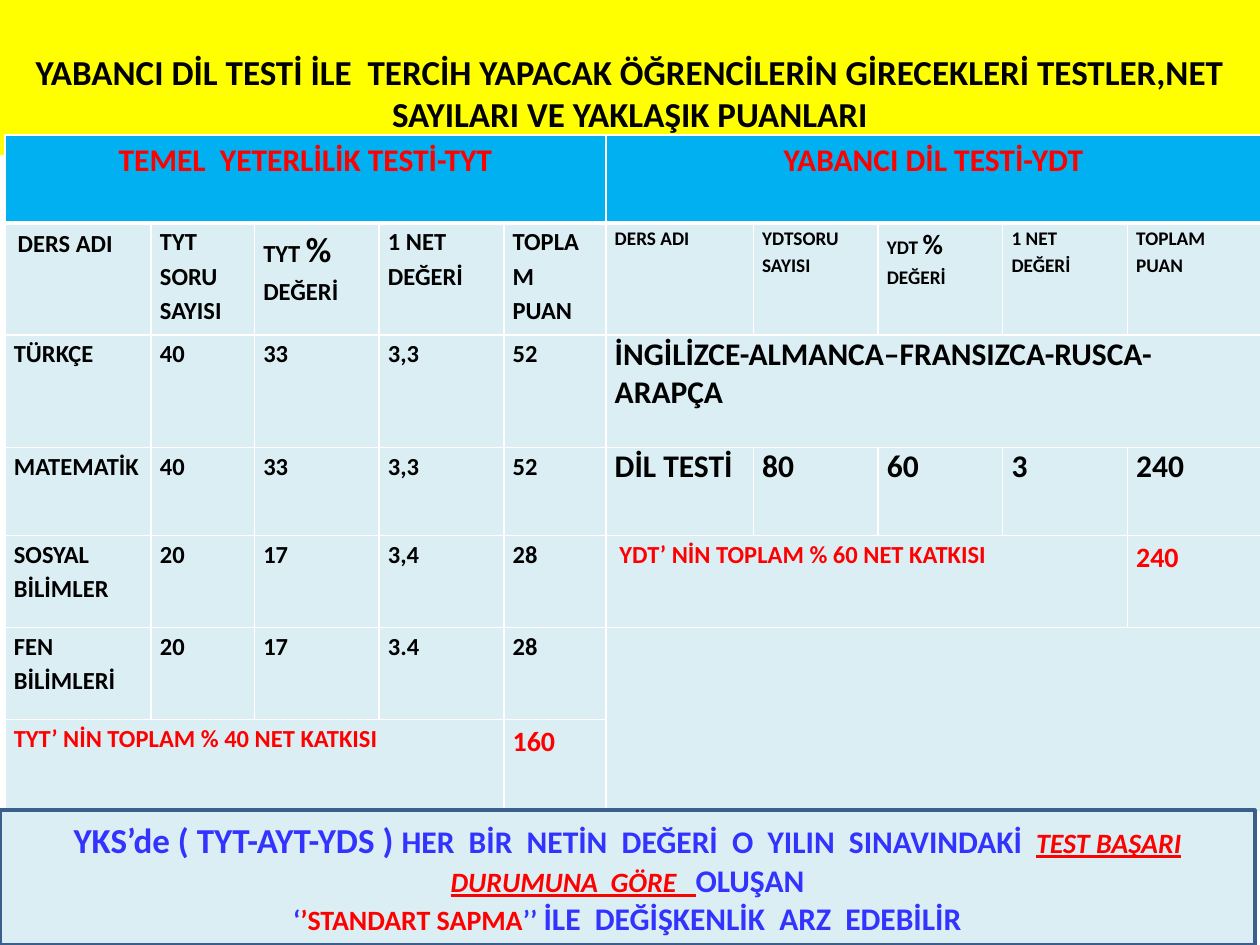
import pptx
import pptx.util
import pptx.dml.color
import pptx.enum.shapes
import pptx.enum.text
import pptx.oxml
import pptx.oxml.ns

Inches, Pt = pptx.util.Inches, pptx.util.Pt
FONT = "Calibri"
COLOURS = {"black": "000000", "red": "FF0000", "blue": "3333FF", "yellow": "FFFF00",
           "sky": "00B0F0", "pale": "DBEEF4", "navy": "3A5F8C", "white": "FFFFFF"}

TITLE = ("YABANCI DİL TESTİ İLE  TERCİH YAPACAK ÖĞRENCİLERİN GİRECEKLERİ "
         "TESTLER,NET SAYILARI VE YAKLAŞIK PUANLARI")

# Table content: the TYT half fills columns 0-4, the YDT half columns 5-9
HEADINGS = ["TEMEL  YETERLİLİK TESTİ-TYT", "YABANCI DİL TESTİ-YDT"]
TYT_COLUMNS = ["DERS ADI", "TYT SORU SAYISI", [("TYT ", 14), ("%", 20), (" DEĞERİ", 14)],
               "1 NET DEĞERİ", "TOPLAM PUAN"]
YDT_COLUMNS = ["DERS ADI", "YDTSORU SAYISI", [("YDT ", 11), ("%", 16), (" DEĞERİ", 11)],
               "1 NET DEĞERİ", "TOPLAM\nPUAN"]
TYT_ROWS = [
    ["TÜRKÇE", "40", "33", "3,3", "52"],
    ["MATEMATİK", "40", "33", "3,3", "52"],
    ["SOSYAL BİLİMLER", "20", "17", "3,4", "28"],
    ["FEN BİLİMLERİ", "20", "17", "3.4", "28"],
]
LANGUAGES = "İNGİLİZCE-ALMANCA–FRANSIZCA-RUSCA-ARAPÇA"
LANGUAGE_TEST = ["DİL TESTİ", "80", "60", "3", "240"]
TOTALS = [  # row, first column, label runs, points
    (4, 5, [(" ", 12), ("YDT’ NİN TOPLAM % 60 NET KATKISI", 14)], "240"),
    (6, 0, "TYT’ NİN TOPLAM % 40 NET KATKISI", "160"),
]
COLUMN_WIDTHS = [1.16, 0.82, 0.99, 0.99, 0.81, 1.17, 0.99, 0.99, 0.99, 1.06]
ROW_HEIGHTS = [0.7, 0.89, 0.89, 0.7, 0.73, 0.73, 0.73]
HALF = 5

EMPHASIS = {"italic": True, "underline": True}
NOTE = [
    [("YKS’de ( TYT-AYT-YDS ) ", 20, "blue", {}),
     ("HER  BİR  NETİN  DEĞERİ  O  YILIN  SINAVINDAKİ ", 18, "blue", {}),
     (" ", 16, "blue", {}),
     ("TEST BAŞARI DURUMUNA  GÖRE   ", 16, "red", EMPHASIS),
     ("OLUŞAN", 18, "blue", {})],
    [("‘", 16, "blue", {}), ("’STANDART SAPMA", 16, "red", {}), ("’’ ", 16, "blue", {}),
     ("İLE  DEĞİŞKENLİK  ARZ  EDEBİLİR", 18, "blue", {})],
]


def rgb(name):
    return pptx.dml.color.RGBColor.from_string(COLOURS[name])


def paint(part, name):
    part.fill.solid()
    part.fill.fore_color.rgb = rgb(name)


def apply(target, values):
    for name, value in values.items():
        setattr(target, name, value)


def add_run(paragraph, text, size, colour, extra=None):
    run = paragraph.add_run()
    run.text = text
    apply(run.font, {"name": FONT, "size": Pt(size), "bold": True, **(extra or {})})
    run.font.color.rgb = rgb(colour)


def write_cell(cell, content, size=14, colour="black", spacing=1.15, tight=True, centred=False):
    if tight:
        apply(cell, {"margin_left": Inches(0.07), "margin_right": Inches(0.07),
                     "margin_top": 0, "margin_bottom": 0})
    lines = [[(line, size)] for line in content.split("\n")] if isinstance(content, str) else [content]
    for index, runs in enumerate(lines):
        paragraph = cell.text_frame.add_paragraph() if index else cell.text_frame.paragraphs[0]
        if spacing:
            paragraph.line_spacing = spacing
        if centred:
            paragraph.alignment = pptx.enum.text.PP_ALIGN.CENTER
        for text, run_size in runs:
            add_run(paragraph, text, run_size, colour)


def add_borders(cell, widths):
    properties = cell._tc.get_or_add_tcPr()
    for index, (side, width) in enumerate(widths.items()):
        properties.insert(index, pptx.oxml.parse_xml(
            f'<a:ln{side} {pptx.oxml.ns.nsdecls("a")} w="{Pt(width)}"><a:solidFill>'
            f'<a:srgbClr val="{COLOURS["white"]}"/></a:solidFill></a:ln{side}>'))


presentation = pptx.Presentation()
apply(presentation, {"slide_width": Inches(10), "slide_height": Inches(7.5)})
slide = presentation.slides.add_slide(presentation.slide_layouts[5])

# Title band
title = slide.shapes.title
apply(title, {"left": 0, "top": 0, "width": Inches(10), "height": Inches(1.23)})
paint(title, "yellow")
apply(title.text_frame, {"word_wrap": True, "margin_top": Inches(0.4), "margin_bottom": 0,
                         "auto_size": pptx.enum.text.MSO_AUTO_SIZE.NONE,
                         "vertical_anchor": pptx.enum.text.MSO_ANCHOR.TOP})
title.text_frame.paragraphs[0].alignment = pptx.enum.text.PP_ALIGN.CENTER
add_run(title.text_frame.paragraphs[0], TITLE, 20, "black")

# Score table: grid, fills and borders
scores = slide.shapes.add_table(len(ROW_HEIGHTS), len(COLUMN_WIDTHS), Inches(0.04), Inches(1.07),
                                Inches(sum(COLUMN_WIDTHS)), Inches(sum(ROW_HEIGHTS))).table
for column, width in zip(scores.columns, COLUMN_WIDTHS):
    column.width = Inches(width)
for row, height in zip(scores.rows, ROW_HEIGHTS):
    row.height = Inches(height)
for r in range(len(ROW_HEIGHTS)):
    for c in range(len(COLUMN_WIDTHS)):
        paint(scores.cell(r, c), "pale" if r else "sky")
        add_borders(scores.cell(r, c), {"L": 1, "R": 1, "T": 3 if r == 1 else 1, "B": 1 if r else 3})

# Merged areas: first row, first column, last row, last column
for r1, c1, r2, c2 in [(0, 0, 0, 4), (0, 5, 0, 9), (2, 5, 2, 9), (4, 5, 4, 8),
                       (5, 5, 6, 9), (6, 0, 6, 3)]:
    scores.cell(r1, c1).merge(scores.cell(r2, c2))

# Table text
for half, heading in enumerate(HEADINGS):
    write_cell(scores.cell(0, half * HALF), heading, 18, "red", None, tight=False, centred=True)
for c, (tyt, ydt) in enumerate(zip(TYT_COLUMNS, YDT_COLUMNS)):
    write_cell(scores.cell(1, c), tyt, spacing=1.15 if c else None, tight=c > 0)
    write_cell(scores.cell(1, c + HALF), ydt, 11)
for r, values in enumerate(TYT_ROWS, start=2):
    for c, value in enumerate(values):
        write_cell(scores.cell(r, c), value)
write_cell(scores.cell(2, HALF), LANGUAGES, 18, spacing=None)
for c, value in enumerate(LANGUAGE_TEST, start=HALF):
    write_cell(scores.cell(3, c), value, 18, spacing=None)
for r, c, label, points in TOTALS:
    write_cell(scores.cell(r, c), label, colour="red")
    write_cell(scores.cell(r, c + HALF - 1), points, 16, "red")

# Closing note
note = slide.shapes.add_shape(pptx.enum.shapes.MSO_SHAPE.RECTANGLE,
                              0, Inches(6.43), Inches(9.96), Inches(1.07))
note.shadow.inherit = False
paint(note, "pale")
note.line.color.rgb = rgb("navy")
note.line.width = Pt(2)
apply(note.text_frame, {"word_wrap": True, "vertical_anchor": pptx.enum.text.MSO_ANCHOR.MIDDLE})
for index, runs in enumerate(NOTE):
    paragraph = note.text_frame.add_paragraph() if index else note.text_frame.paragraphs[0]
    paragraph.alignment = pptx.enum.text.PP_ALIGN.CENTER
    for run in runs:
        add_run(paragraph, *run)

presentation.save("out.pptx")
